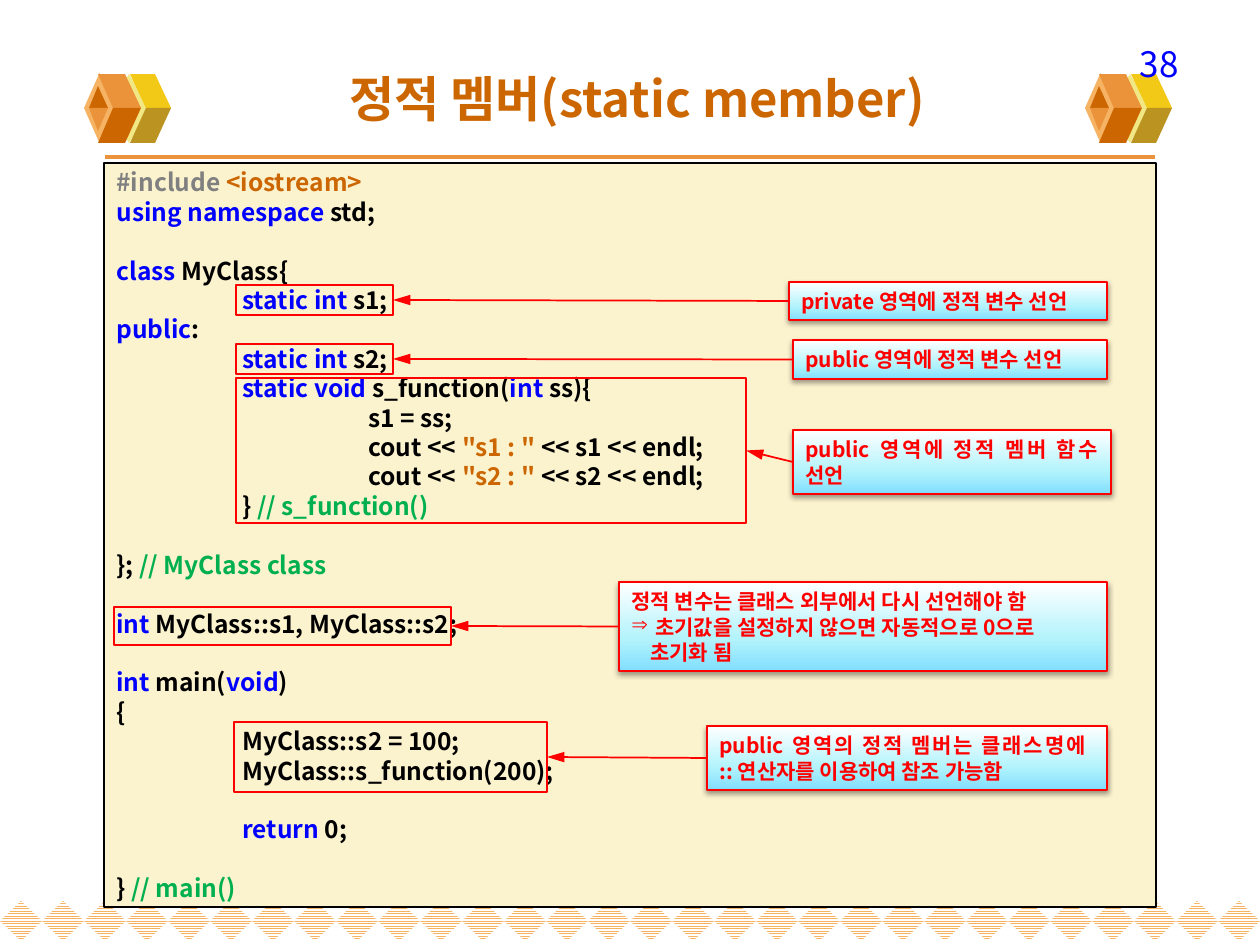
from copy import deepcopy

from lxml import etree
from pptx import Presentation
from pptx import util as u
from pptx.dml.color import RGBColor
from pptx.enum import dml, shapes, text
from pptx.oxml.ns import qn

PX = 914400 / 126
FONT = "Noto Sans CJK KR"
COLORS = {
    "blue": "0000FF", "black": "000000", "gray": "808080", "green": "00B050",
    "rust": "CC6600", "orange": "EB933B", "apricot": "F5B363", "lemon": "F1E785",
    "gold": "F3C917", "olive": "BB9321", "cream": "FBF2CE", "red": "FF0000",
    "white": "FFFFFF", "sky": "81DEFF", "ice": "B2F3FC",
}
CODE = [
    (0, [("#include ", "gray"), ("<iostream>", "rust")]),
    (0, [("using namespace", "blue"), (" std;", "black")]),
    (1, [("class ", "blue"), ("MyClass{", "black")]),
    (0, [("\tstatic int", "blue"), (" s1;", "black")]),
    (0, [("public", "blue"), (":", "black")]),
    (0, [("\tstatic int", "blue"), (" s2;", "black")]),
    (0, [("\tstatic void ", "blue"), ("s_function(", "black"), ("int", "blue"), (" ss){", "black")]),
    (0, [("\t\ts1 = ss;", "black")]),
    (0, [("\t\tcout << ", "black"), ('"s1 : " ', "rust"), ("<< s1 << endl;", "black")]),
    (0, [("\t\tcout << ", "black"), ('"s2 : " ', "rust"), ("<< s2 << endl;", "black")]),
    (0, [("\t} ", "black"), ("// s_function()", "green")]),
    (1, [("}; ", "black"), ("// MyClass class", "green")]),
    (1, [("int ", "blue"), ("MyClass::s1, MyClass::s2;", "black")]),
    (1, [("int", "blue"), (" main(", "black"), ("void", "blue"), (")", "black")]),
    (0, [("{", "black")]),
    (0, [("\tMyClass::s2 = 100;", "black")]),
    (0, [("\tMyClass::s_function(200);", "black")]),
    (1, [("\treturn", "blue"), (" 0;", "black")]),
    (1, [("} ", "black"), ("// main()", "green")]),
]
NOTES = [
    ((236, 285, 157, 30), (789, 282, 318, 38), [("private 영역에 정적 변수 선언", 0, None)]),
    ((236, 344, 157, 30), (793, 340, 314, 39), [("public 영역에 정적 변수 선언", 0, None)]),
    ((236, 378, 510, 145), (793, 430, 318, 64), [("public 영역에 정적 멤버 함수 선언", 0, None)]),
    ((114, 607, 337, 38), (619, 582, 488, 89), [
        ("정적 변수는 클래스 외부에서 다시 선언해야 함", 0, None),
        ("초기값을 설정하지 않으면 자동적으로 0으로", 24, "⇒"),
        ("초기화 됨", 19, None)]),
    ((234, 722, 313, 70), (707, 726, 400, 64), [
        ("public 영역의 정적 멤버는 클래스명에 \v:: 연산자를 이용하여 참조 가능함", 0, None)]),
]


def px(n):
    return u.Emu(round(n * PX))


def rgb(name):
    return RGBColor.from_string(COLORS[name])


def style_run(run, size, color, bold=True):
    run.font.size = u.Pt(size)
    run.font.bold = bold
    run.font.color.rgb = rgb(color)
    run.font.name = FONT
    etree.SubElement(run.font._element, qn("a:ea"), typeface=FONT)


def add_preset(slide, kind, box, fill=None, line=None, width=1):
    shape = slide.shapes.add_shape(kind, *map(px, box))
    paint(shape, fill, line, width)
    return shape


def paint(shape, fill=None, line=None, width=1):
    shape.shadow.inherit = False
    if fill:
        shape.fill.solid()
        shape.fill.fore_color.rgb = rgb(fill)
    else:
        shape.fill.background()
    if line:
        shape.line.color.rgb = rgb(line)
        shape.line.width = u.Pt(width)
    else:
        shape.line.fill.background()


def add_line(slide, start, end, color, width):
    line = slide.shapes.add_connector(
        shapes.MSO_CONNECTOR.STRAIGHT, *map(px, start + end))
    line.line.color.rgb = rgb(color)
    line.line.width = u.Pt(width)
    etree.SubElement(line._element.spPr, qn("a:effectLst"))
    return line


def add_border(slide, box, count):
    left, top, width, height = box
    pitch = width / count
    for i in range(count):
        diamond = add_preset(slide, shapes.MSO_SHAPE.DIAMOND,
                             (left + i * pitch, top, pitch, height))
        diamond.fill.patterned()
        diamond.fill.pattern = dml.MSO_PATTERN.NARROW_HORIZONTAL
        diamond.fill.fore_color.rgb = rgb("apricot")
        diamond.fill.back_color.rgb = rgb("white")


def add_cube(slide, left, top):
    def diamond(x, y, w, h, color):
        add_preset(slide, shapes.MSO_SHAPE.DIAMOND, (left + x, top + y, w, h), color)

    def face(points, color):
        outline = slide.shapes.build_freeform(*points[0], scale=PX)
        outline.add_line_segments(points[1:])
        paint(outline.convert_to_shape(px(left), px(top)), color)

    diamond(24, 1, 42, 69, "lemon")
    face([(62, 35), (87, 35), (71, 1), (46, 1)], "gold")
    face([(62, 35), (87, 35), (71, 70), (46, 70)], "olive")
    diamond(0, 0, 31, 70, "apricot")
    face([(29, 35), (57, 35), (41, 1), (14, 1)], "orange")
    face([(29, 35), (57, 35), (41, 70), (14, 70)], "rust")
    face([(14, 13), (5, 35), (24, 35)], "rust")
    face([(14, 58), (5, 35), (24, 35)], "orange")


def add_label(slide, box, words, size, color, bold, align, anchor):
    frame = slide.shapes.add_textbox(*map(px, box)).text_frame
    frame.word_wrap = True
    frame.vertical_anchor = anchor
    frame.text = words
    frame.paragraphs[0].alignment = align
    style_run(frame.paragraphs[0].runs[0], size, color, bold)


def add_header(slide, box):
    left, top, width, height = box
    add_line(slide, (left + 42, top + 119), (left + width - 42, top + 119), "orange", 2.25)
    for x in (21, 1022):
        add_cube(slide, left + x, top + 35)
    add_label(slide, (left + 834, top - 2, 294, 38), "38", 20, "blue", False,
              text.PP_ALIGN.RIGHT, text.MSO_ANCHOR.TOP)
    add_label(slide, (left + 7, top, width, height), "정적 멤버(static member)", 28,
              "rust", True, text.PP_ALIGN.CENTER, text.MSO_ANCHOR.MIDDLE)


def set_tabs(row, *stops):
    tabs = etree.SubElement(row._element.get_or_add_pPr(), qn("a:tabLst"))
    for stop in stops:
        etree.SubElement(tabs, qn("a:tab"), pos=str(px(stop)), algn="l")


def add_code(slide, box):
    pitch = u.Pt(16.8)
    panel = add_preset(slide, shapes.MSO_SHAPE.RECTANGLE, box, "cream", "black", 1.5)
    frame = panel.text_frame
    frame.vertical_anchor = text.MSO_ANCHOR.MIDDLE
    for i, (gap, parts) in enumerate(CODE):
        row = frame.add_paragraph() if i else frame.paragraphs[0]
        row.alignment = text.PP_ALIGN.LEFT
        row.line_spacing = pitch
        row.space_before = gap * pitch
        set_tabs(row, 126, 252)
        for words, color in parts:
            run = row.add_run()
            run.text = words
            style_run(run, 14, color)


def add_glow(callout):
    callout.fill.gradient()
    callout.fill.gradient_angle = 90
    stop_list = callout._element.spPr.find(".//" + qn("a:gsLst"))
    stop_list.append(deepcopy(stop_list[0]))
    for stop, (place, color) in zip(
            callout.fill.gradient_stops, [(0, "sky"), (0.35, "ice"), (1, "white")]):
        stop.position = place
        stop.color.rgb = rgb(color)
    effects = callout._element.spPr.find(qn("a:effectLst"))
    shadow = etree.SubElement(effects, qn("a:outerShdw"), blurRad=str(u.Pt(3.1)),
                              dist=str(u.Pt(1.6)), dir="5400000", rotWithShape="0")
    shade = etree.SubElement(shadow, qn("a:srgbClr"), val=COLORS["black"])
    etree.SubElement(shade, qn("a:alpha"), val="38000")


def add_callout(slide, box, rows):
    callout = add_preset(slide, shapes.MSO_SHAPE.RECTANGLE, box, line="red")
    add_glow(callout)
    frame = callout.text_frame
    frame.vertical_anchor = text.MSO_ANCHOR.TOP
    for i, (words, indent, bullet) in enumerate(rows):
        row = frame.add_paragraph() if i else frame.paragraphs[0]
        row.text = words
        row.alignment = text.PP_ALIGN.JUSTIFY
        row.line_spacing = u.Pt(14.6)
        props = row._element.get_or_add_pPr()
        props.set("marL", str(px(indent)))
        if bullet:
            props.set("indent", str(-px(indent)))
            etree.SubElement(props, qn("a:buChar"), char=bullet)
        for run in row.runs:
            style_run(run, 12, "red")
    return callout


def add_note(slide, mark_box, callout_box, rows):
    callout = add_callout(slide, callout_box, rows)
    mark = add_preset(slide, shapes.MSO_SHAPE.RECTANGLE, mark_box, line="red")
    arrow = add_line(slide, (0, 0), (0, 0), "red", 1)
    arrow.begin_connect(callout, 1)
    arrow.end_connect(mark, 3)
    etree.SubElement(arrow._element.spPr.find(qn("a:ln")), qn("a:tailEnd"),
                     type="triangle", w="med", len="lg")


def main():
    deck = Presentation()
    deck.slide_width, deck.slide_height = px(1260), px(945)
    slide = deck.slides.add_slide(deck.slide_layouts[6])
    add_border(slide, (0, 901, 1260, 40), 30)
    add_header(slide, (63, 38, 1134, 120))
    add_code(slide, (104, 163, 1052, 744))
    for note in NOTES:
        add_note(slide, *note)
    deck.save("out.pptx")


if __name__ == "__main__":
    main()
